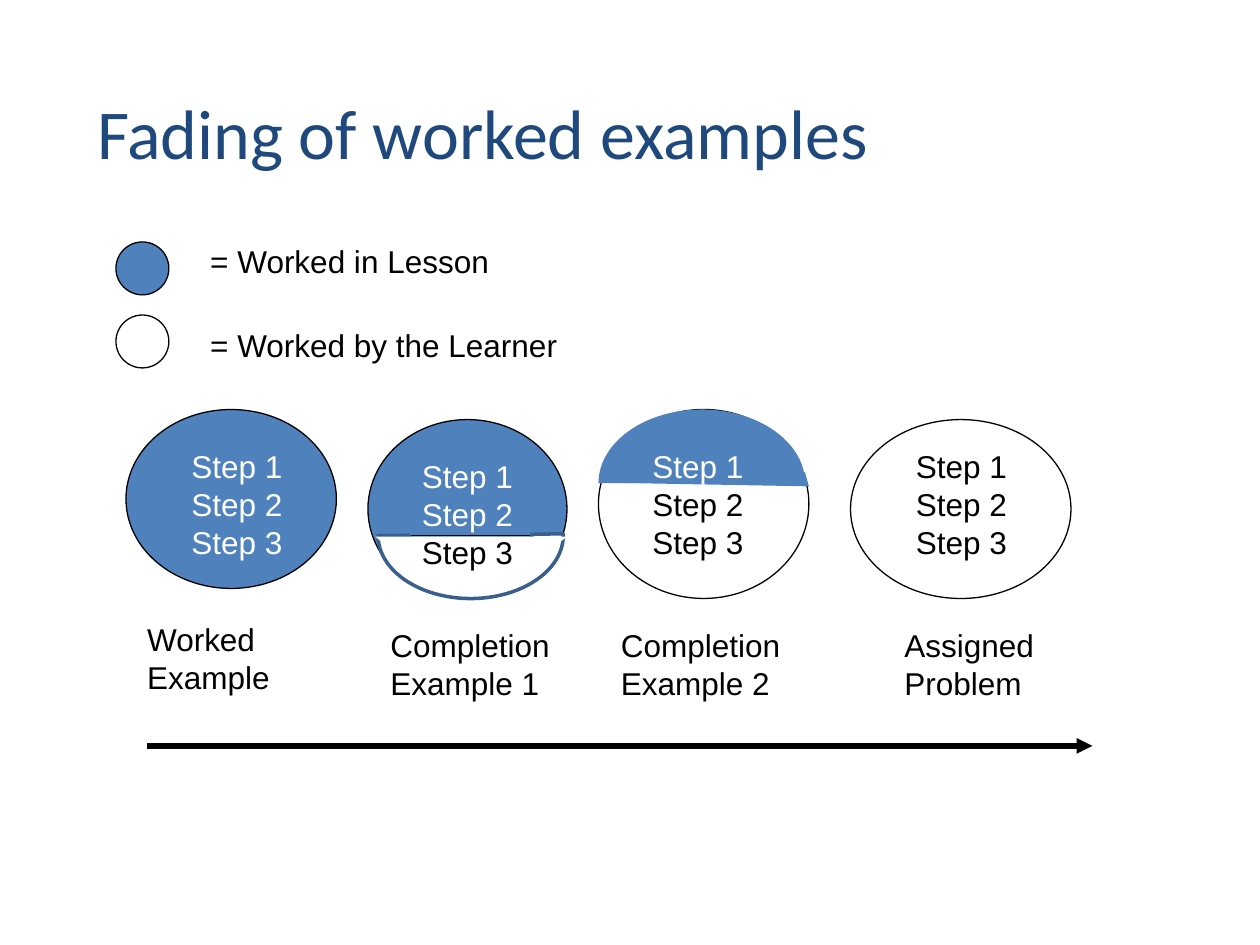
from dataclasses import dataclass

from lxml import etree
from pptx import Presentation
from pptx.dml.color import RGBColor
from pptx.enum.shapes import MSO_CONNECTOR, MSO_SHAPE
from pptx.enum.text import MSO_ANCHOR, MSO_AUTO_SIZE, PP_ALIGN
from pptx.oxml.ns import qn
from pptx.util import Inches, Pt

STRAIGHT = MSO_CONNECTOR.STRAIGHT
ELLIPSE = MSO_SHAPE.OVAL
BLOCK_ARC = MSO_SHAPE.BLOCK_ARC
MIDDLE = MSO_ANCHOR.MIDDLE
FIT_SHAPE = MSO_AUTO_SIZE.SHAPE_TO_FIT_TEXT
NO_FIT = MSO_AUTO_SIZE.NONE
LEFT = PP_ALIGN.LEFT
TITLE_ONLY = 5


@dataclass(frozen=True)
class Theme:
    lesson: RGBColor = RGBColor(0x4F, 0x81, 0xBD)
    learner: RGBColor = RGBColor(0xFF, 0xFF, 0xFF)
    ink: RGBColor = RGBColor(0, 0, 0)
    rim: RGBColor = RGBColor(0x3A, 0x5F, 0x8C)
    heading: RGBColor = RGBColor(0x1F, 0x49, 0x7D)
    title_font: str = "Calibri"
    body_font: str = "Arial"
    title_size: int = 40
    body_size: int = 18


class SlideBuilder:
    def __init__(self, slide, theme):
        self.slide = slide
        self.shapes = slide.shapes
        self.theme = theme

    def style_paragraph(self, para, font, size, color):
        para.alignment = LEFT
        para.font.name = font
        para.font.size = Pt(size)
        para.font.color.rgb = color

    def title(self, text, left, top, width, height):
        box = self.shapes.title
        box.left, box.top = Inches(left), Inches(top)
        box.width, box.height = Inches(width), Inches(height)
        frame = box.text_frame
        frame.text = text
        frame.auto_size = NO_FIT
        frame.vertical_anchor = MIDDLE
        theme = self.theme
        self.style_paragraph(frame.paragraphs[0], theme.title_font, theme.title_size, theme.heading)

    def text(self, lines, colors, left, top, width, height):
        box = self.shapes.add_textbox(Inches(left), Inches(top), Inches(width), Inches(height))
        frame = box.text_frame
        frame.word_wrap = False
        frame.auto_size = FIT_SHAPE
        frame.text = "\n".join(lines)
        for para, color in zip(frame.paragraphs, colors):
            self.style_paragraph(para, self.theme.body_font, self.theme.body_size, color)

    def paint(self, shape, fill, line, weight):
        shape.shadow.inherit = False
        shape.fill.solid()
        shape.fill.fore_color.rgb = fill
        if line is None:
            shape.line.fill.background()
        else:
            shape.line.color.rgb = line
            shape.line.width = Pt(weight)

    def preset(self, kind, left, top, width, height, fill, line=None, weight=0.75):
        shape = self.shapes.add_shape(kind, Inches(left), Inches(top), Inches(width), Inches(height))
        self.paint(shape, fill, line, weight)
        return shape

    def circle(self, left, top, width, height, fill):
        return self.preset(ELLIPSE, left, top, width, height, fill, self.theme.ink)

    def outline(self, points, fill):
        corners = [(Inches(x), Inches(y)) for x, y in points]
        builder = self.shapes.build_freeform(*corners[0])
        builder.add_line_segments(corners[1:], close=True)
        self.paint(builder.convert_to_shape(), fill, None, 0)

    def rule(self, start, end, top, weight, arrow=False):
        rule = self.shapes.add_connector(STRAIGHT, Inches(start), Inches(top), Inches(end), Inches(top))
        rule.line.color.rgb = self.theme.ink
        rule.line.width = Pt(weight)
        properties = rule._element.spPr
        if arrow:
            etree.SubElement(properties.find(qn("a:ln")), qn("a:tailEnd"), type="triangle")
        etree.SubElement(properties, qn("a:effectLst"))


def main():
    deck = Presentation()
    deck.slide_width, deck.slide_height = Inches(10), Inches(7.5)
    theme = Theme()
    page = SlideBuilder(deck.slides.add_slide(deck.slide_layouts[TITLE_ONLY]), theme)
    lesson, learner, ink = theme.lesson, theme.learner, theme.ink

    page.title("Fading of worked examples", 0.67, 0.67, 9, 0.75)

    legend = [
        ("= Worked in Lesson", lesson, 1.92, 1.87, 2.42),
        ("= Worked by the Learner", learner, 2.5, 2.54, 2.96),
    ]
    for label, fill, circle_top, label_top, width in legend:
        page.circle(0.92, circle_top, 0.42, 0.42, fill)
        page.text([label], [ink], 1.57, label_top, width, 0.4)

    ellipses = [
        (1, 3.25, 1.67, 1.42, lesson),
        (2.92, 3.33, 1.58, 1.42, lesson),
        (4.75, 3.25, 1.67, 1.5, learner),
        (6.75, 3.33, 1.75, 1.42, learner),
    ]
    for ellipse in ellipses:
        page.circle(*ellipse)

    page.rule(3, 4.42, 4.25, 0.75)
    learner_arc = page.preset(BLOCK_ARC, 3, 3.75, 1.47, 1, learner, theme.rim, 2)
    learner_arc.rotation = 180
    learner_arc.adjustments[0] = 107.34
    page.outline(
        [(2.98, 4.26), (4.5, 4.26), (4.17, 4.51), (3.7, 4.63), (3.33, 4.56)], learner
    )
    page.preset(BLOCK_ARC, 4.75, 3.25, 1.64, 1.17, lesson)
    page.outline(
        [(4.75, 3.83), (6.42, 3.86), (6.39, 3.75), (5.78, 3.51), (5.02, 3.56)], lesson
    )

    steps = ["Step 1", "Step 2", "Step 3"]
    stages = [
        (["Worked", "Example"], 1.07, 4.87, 1.17, 1.42, 3.5, 3),
        (["Completion", "Example 1"], 3, 4.92, 1.47, 3.25, 3.58, 2),
        (["Completion", "Example 2"], 4.83, 4.92, 1.47, 5.08, 3.5, 1),
        (["Assigned", "Problem"], 7.08, 4.92, 1.3, 7.17, 3.5, 0),
    ]
    for caption, left, top, width, steps_left, steps_top, worked in stages:
        page.text(caption, [ink] * 2, left, top, width, 0.7)
        colors = [learner] * worked + [ink] * (len(steps) - worked)
        page.text(steps, colors, steps_left, steps_top, 0.92, 1)

    page.rule(1.17, 8.67, 5.92, 3, arrow=True)
    deck.save("out.pptx")


if __name__ == "__main__":
    main()
